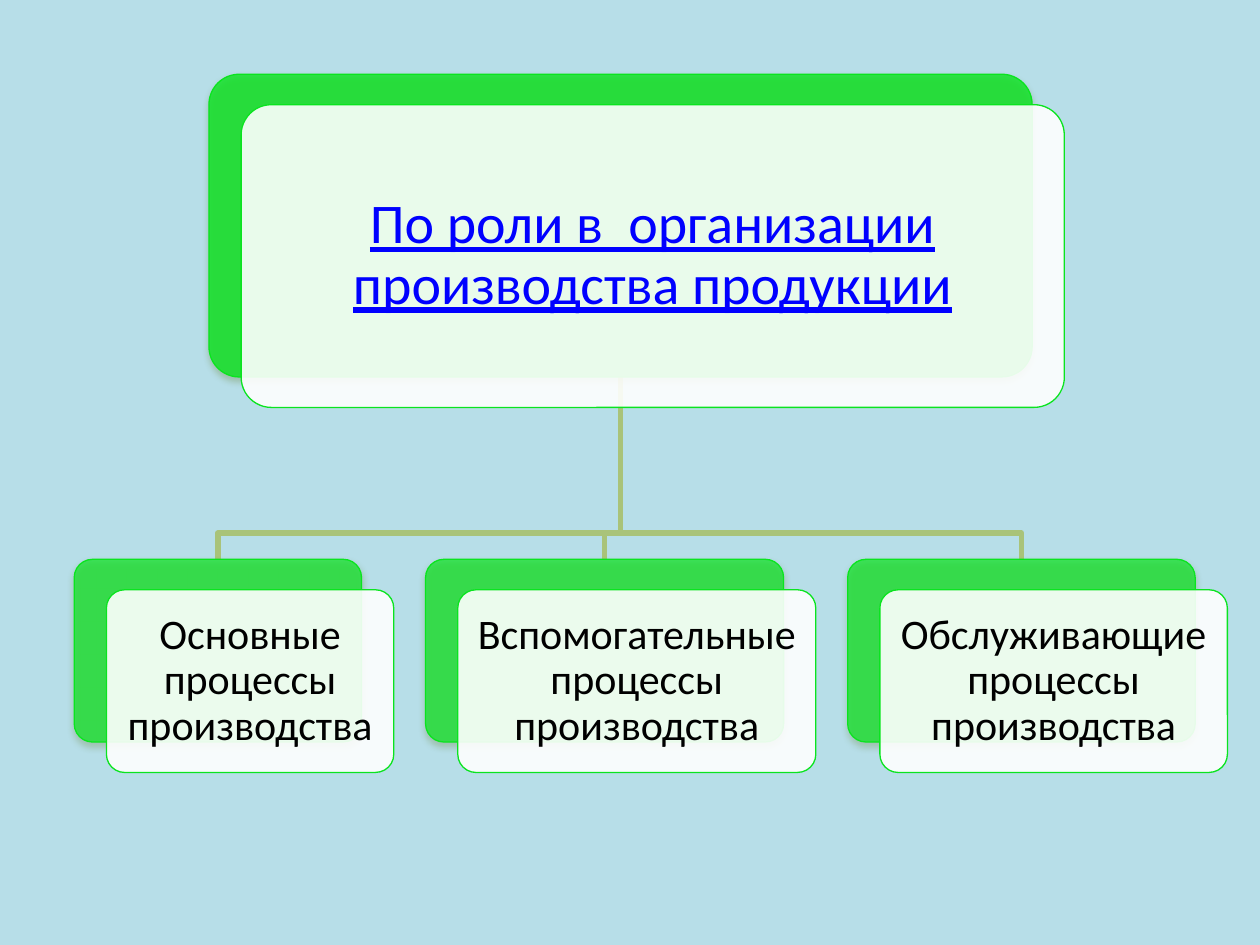
"""Build a slide with a tree of production processes by their role."""
from lxml.etree import SubElement
from pptx import Presentation
from pptx.dml.color import RGBColor
from pptx.enum.shapes import MSO_SHAPE
from pptx.enum.text import MSO_ANCHOR, MSO_AUTO_SIZE, PP_ALIGN
from pptx.oxml.ns import qn
from pptx.util import Pt

COLORS = {
    "background": "B7DEE8", "green": "0AE41F", "card": "FFFFFF",
    "line": "A9C379", "shadow": "617D26", "title": "0000FF", "text": "000000",
}
ROOT = (119.4, 42.4, 470.4, 173)
CHILDREN = [
    ("Основные процессы производства", 164.2),
    ("Вспомогательные процессы производства", 204.6),
    ("Обслуживающие процессы производства", 198.6),
]
CHILD_LEFT, CHILD_TOP, CHILD_HEIGHT, GAP = 42.4, 319.6, 104.4, 36.6
SHIFT_X, SHIFT_Y = 18.4, 17.4
BAR_TOP = 304.6


def add_panel(page, bounds, color, opacity, shadow=False):
    box = page.shapes.add_shape(MSO_SHAPE.ROUNDED_RECTANGLE, *map(Pt, bounds))
    box.adjustments[0] = 0.1
    box.shadow.inherit = False
    box.fill.solid()
    box.fill.fore_color.rgb = RGBColor.from_string(COLORS[color])
    tint = box._element.spPr.find(qn("a:solidFill"))[0]
    SubElement(tint, qn("a:alpha"), val=str(opacity * 1000))
    box.line.color.rgb = RGBColor.from_string(COLORS["green"])
    box.line.width = Pt(0.75)
    if shadow:
        effects = box._element.spPr.find(qn("a:effectLst"))
        outer = SubElement(effects, qn("a:outerShdw"), blurRad=str(Pt(4)),
                           dist=str(Pt(2)), dir="5400000", rotWithShape="0")
        shade = SubElement(outer, qn("a:srgbClr"), val=COLORS["shadow"])
        SubElement(shade, qn("a:alpha"), val="38000")
    return box


def write_text(box, text, color, size, inset, underline=False):
    frame = box.text_frame
    frame_format = {
        "word_wrap": True, "auto_size": MSO_AUTO_SIZE.NONE,
        "vertical_anchor": MSO_ANCHOR.MIDDLE,
        "margin_left": Pt(inset), "margin_right": Pt(inset),
        "margin_top": Pt(inset), "margin_bottom": Pt(inset),
    }
    for name, value in frame_format.items():
        setattr(frame, name, value)
    para = frame.paragraphs[0]
    para.alignment = PP_ALIGN.CENTER
    para.line_spacing = 0.9
    span = para.add_run()
    span.text = text
    span.font.color.rgb = RGBColor.from_string(COLORS[color])
    font_format = {"name": "Calibri", "size": Pt(size), "underline": underline}
    for name, value in font_format.items():
        setattr(span.font, name, value)


deck = Presentation()
deck.slide_width, deck.slide_height = Pt(720), Pt(540)
page = deck.slides.add_slide(deck.slide_layouts[5])
page.background.fill.solid()
page.background.fill.fore_color.rgb = RGBColor.from_string(COLORS["background"])

children = []
left = CHILD_LEFT
for label, width in CHILDREN:
    children.append((label, (left, CHILD_TOP, width, CHILD_HEIGHT)))
    left += width + GAP

root_left, root_top, root_width, root_height = ROOT
root_center = root_left + root_width / 2
root_bottom = root_top + root_height
for label, (left, top, width, height) in reversed(children):
    center = left + width / 2
    builder = page.shapes.build_freeform(Pt(root_center), Pt(root_bottom))
    corners = [(root_center, BAR_TOP), (center, BAR_TOP), (center, top)]
    builder.add_line_segments([(Pt(x), Pt(y)) for x, y in corners], close=False)
    branch = builder.convert_to_shape()
    branch.shadow.inherit = False
    branch.fill.background()
    branch.line.color.rgb = RGBColor.from_string(COLORS["line"])
    branch.line.width = Pt(3.15)

root_card = (root_left + SHIFT_X, root_top + SHIFT_Y, root_width, root_height)
add_panel(page, ROOT, "green", 80, shadow=True)
add_panel(page, root_card, "card", 90)
title = page.shapes.title
title.left, title.top, title.width, title.height = map(Pt, root_card)
write_text(title, "По роли в  организации производства продукции", "title", 32, 9.4,
           underline=True)
page.shapes._spTree.append(title._element)

for label, bounds in children:
    left, top, width, height = bounds
    add_panel(page, bounds, "green", 70, shadow=True)
    card = add_panel(page, (left + SHIFT_X, top + SHIFT_Y, width, height), "card", 90)
    write_text(card, label, "text", 24, 7.2)

deck.save("out.pptx")
